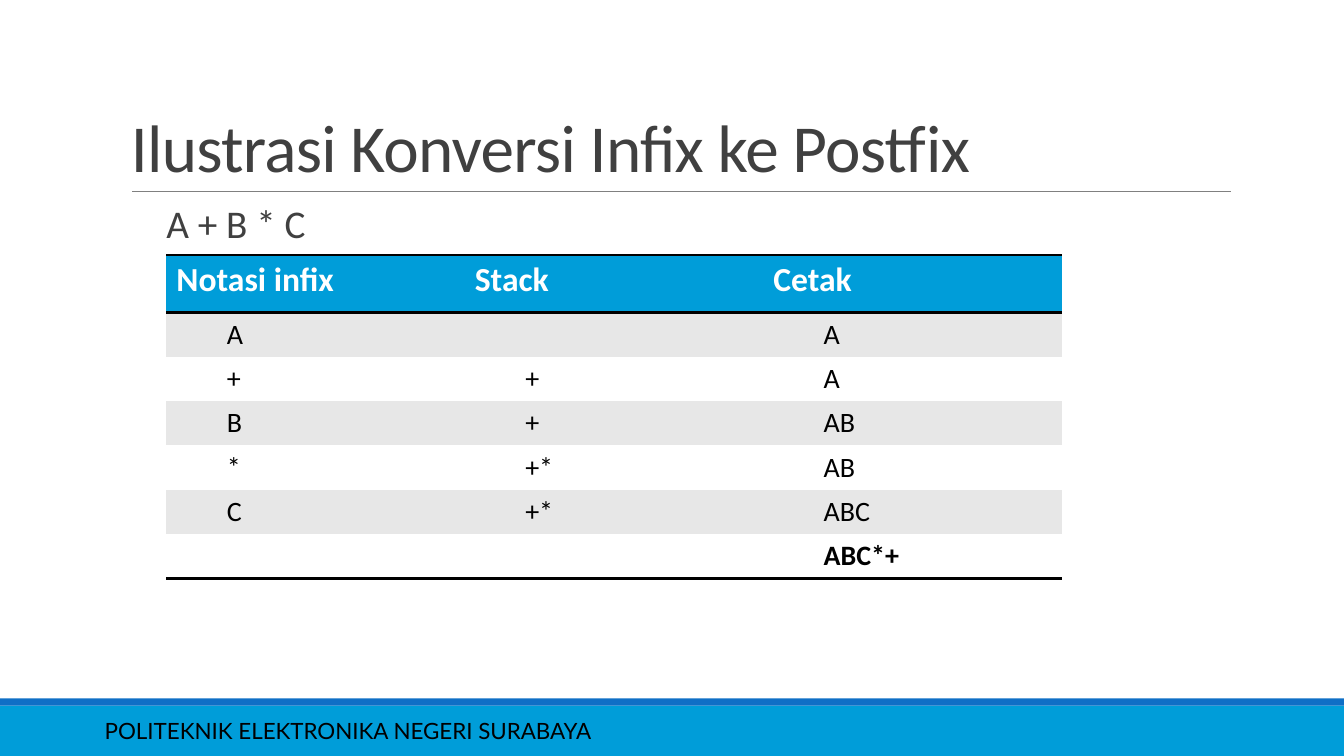
"""Build the slide on turning infix into postfix."""
from dataclasses import dataclass

from lxml import etree
from pptx import Presentation
from pptx.dml.color import RGBColor
from pptx.enum.shapes import MSO_CONNECTOR, MSO_SHAPE
from pptx.enum.text import MSO_ANCHOR
from pptx.oxml.ns import qn
from pptx.slide import Slide
from pptx.table import _Cell
from pptx.text.text import _Paragraph
from pptx.util import Emu, Pt

RECT = MSO_SHAPE.RECTANGLE
STRAIGHT = MSO_CONNECTOR.STRAIGHT
TOP, MIDDLE, BOTTOM = MSO_ANCHOR.TOP, MSO_ANCHOR.MIDDLE, MSO_ANCHOR.BOTTOM

SCALE = 9144
PLAIN = "{2D5ABB26-0587-4C30-8999-92F81FD0307C}"
BLUE, NAVY, GREY = "009DD9", "0F6FC6", "404040"
BLACK, WHITE, BAND = "000000", "FFFFFF", "E7E7E7"


@dataclass(frozen=True)
class Box:
    left: int
    top: int
    width: int
    height: int


@dataclass(frozen=True)
class Bar:
    box: Box
    fill: str


@dataclass(frozen=True)
class Font:
    size: int
    color: str
    name: str = "Calibri"
    bold: bool = False
    track: int = 0


@dataclass(frozen=True)
class Label:
    box: Box
    text: str
    font: Font
    anchor: MSO_ANCHOR
    inset: int = 10
    line: float = 1.0
    after: int = 0


BARS = (
    Bar(Box(0, 700, 1333, 50), BLUE),
    Bar(Box(0, 693, 1333, 7), NAVY),
)
LABELS = (
    Label(Box(94, 705, 841, 40), "POLITEKNIK ELEKTRONIKA NEGERI SURABAYA",
          Font(16, BLACK, "Lato"), MIDDLE),
    Label(Box(120, 31, 1100, 159), "Ilustrasi Konversi Infix ke Postfix",
          Font(48, GREY, track=-50), BOTTOM, line=0.85),
    Label(Box(165, 202, 328, 51), "A + B * C",
          Font(28, GREY), TOP, inset=0, line=0.8, after=2),
)
STEPS = (
    ("Notasi infix", "Stack", "Cetak"),
    ("A", "", "A"),
    ("+", "+", "A"),
    ("B", "+", "AB"),
    ("*", "+*", "AB"),
    ("C", "+*", "ABC"),
    ("", "", "ABC*+"),
)
GRID = Box(165, 253, 888, 321)
HEAD, ROW = 57, 44
HEAD_FONT = Font(24, WHITE, bold=True)
CELL_FONT = Font(20, BLACK)
LAST_FONT = Font(20, BLACK, bold=True)


def px(value: int) -> Emu:
    """Turn px into EMU."""
    return Emu(value * SCALE)


def place(box: Box) -> tuple[Emu, Emu, Emu, Emu]:
    """Give the four lengths of a box in EMU."""
    return px(box.left), px(box.top), px(box.width), px(box.height)


def paint(color: str) -> RGBColor:
    """Turn a hex string into a colour."""
    return RGBColor.from_string(color)


def add_run(para: _Paragraph, text: str, font: Font) -> None:
    """Add one run of text in a font."""
    run = para.add_run()
    run.text = text
    run.font.name = font.name
    run.font.size = Pt(font.size)
    run.font.bold = font.bold
    run.font.color.rgb = paint(font.color)
    if font.track:
        run.font._element.set("spc", str(font.track))


def draw_bar(slide: Slide, bar: Bar) -> None:
    """Draw a plain filled bar."""
    shape = slide.shapes.add_shape(RECT, *place(bar.box))
    shape.shadow.inherit = False
    shape.fill.solid()
    shape.fill.fore_color.rgb = paint(bar.fill)
    shape.line.fill.background()


def draw_rule(slide: Slide, left: int, right: int, top: int) -> None:
    """Draw the thin line below the title."""
    rule = slide.shapes.add_connector(
        STRAIGHT, px(left), px(top), px(right), px(top))
    rule.line.color.rgb = paint("808080")
    rule.line.width = Pt(0.5)
    etree.SubElement(rule._element.spPr, qn("a:effectLst"))


def draw_label(slide: Slide, label: Label) -> None:
    """Draw one line of text."""
    frame = slide.shapes.add_textbox(*place(label.box)).text_frame
    frame.word_wrap = True
    frame.vertical_anchor = label.anchor
    frame.margin_left = frame.margin_right = px(label.inset)
    para = frame.paragraphs[0]
    para.line_spacing = label.line
    para.space_after = Pt(label.after)
    add_run(para, label.text, label.font)


def add_edge(cell: _Cell, side: str) -> None:
    """Add a black border on one side of a cell."""
    props = cell._tc.get_or_add_tcPr()
    edge = etree.SubElement(props, qn(f"a:ln{side}"), w=str(Pt(2)))
    fill = etree.SubElement(edge, qn("a:solidFill"))
    etree.SubElement(fill, qn("a:srgbClr"), val=BLACK)


def fill_cell(cell: _Cell, text: str, row: int) -> None:
    """Fill a cell by the rules of its row."""
    last = len(STEPS) - 1
    for side in {0: "TB", last: "B"}.get(row, ""):
        add_edge(cell, side)
    cell.fill.solid()
    shade = BAND if row % 2 else WHITE
    cell.fill.fore_color.rgb = paint(shade if row else BLUE)
    para = cell.text_frame.paragraphs[0]
    if row:
        para.level = 1
        props = para._p.get_or_add_pPr()
        props.set("marL", str(px(50)))
        props.set("indent", "0")
    if text:
        font = {0: HEAD_FONT, last: LAST_FONT}.get(row, CELL_FONT)
        add_run(para, text, font)


def draw_table(slide: Slide) -> None:
    """Draw the table of steps."""
    count = len(STEPS[0])
    table = slide.shapes.add_table(len(STEPS), count, *place(GRID)).table
    table.first_row = table.horz_banding = False
    table._tbl.tblPr.find(qn("a:tableStyleId")).text = PLAIN
    for column in table.columns:
        column.width = px(GRID.width // count)
    for row, step in enumerate(STEPS):
        table.rows[row].height = px(ROW if row else HEAD)
        for col, text in enumerate(step):
            fill_cell(table.cell(row, col), text, row)


def main() -> None:
    """Build and save the deck."""
    deck = Presentation()
    deck.slide_width, deck.slide_height = px(1333), px(750)
    slide = deck.slides.add_slide(deck.slide_layouts[6])
    for bar in BARS:
        draw_bar(slide, bar)
    draw_rule(slide, 131, 1221, 190)
    for label in LABELS:
        draw_label(slide, label)
    draw_table(slide)
    deck.save("out.pptx")


if __name__ == "__main__":
    main()
